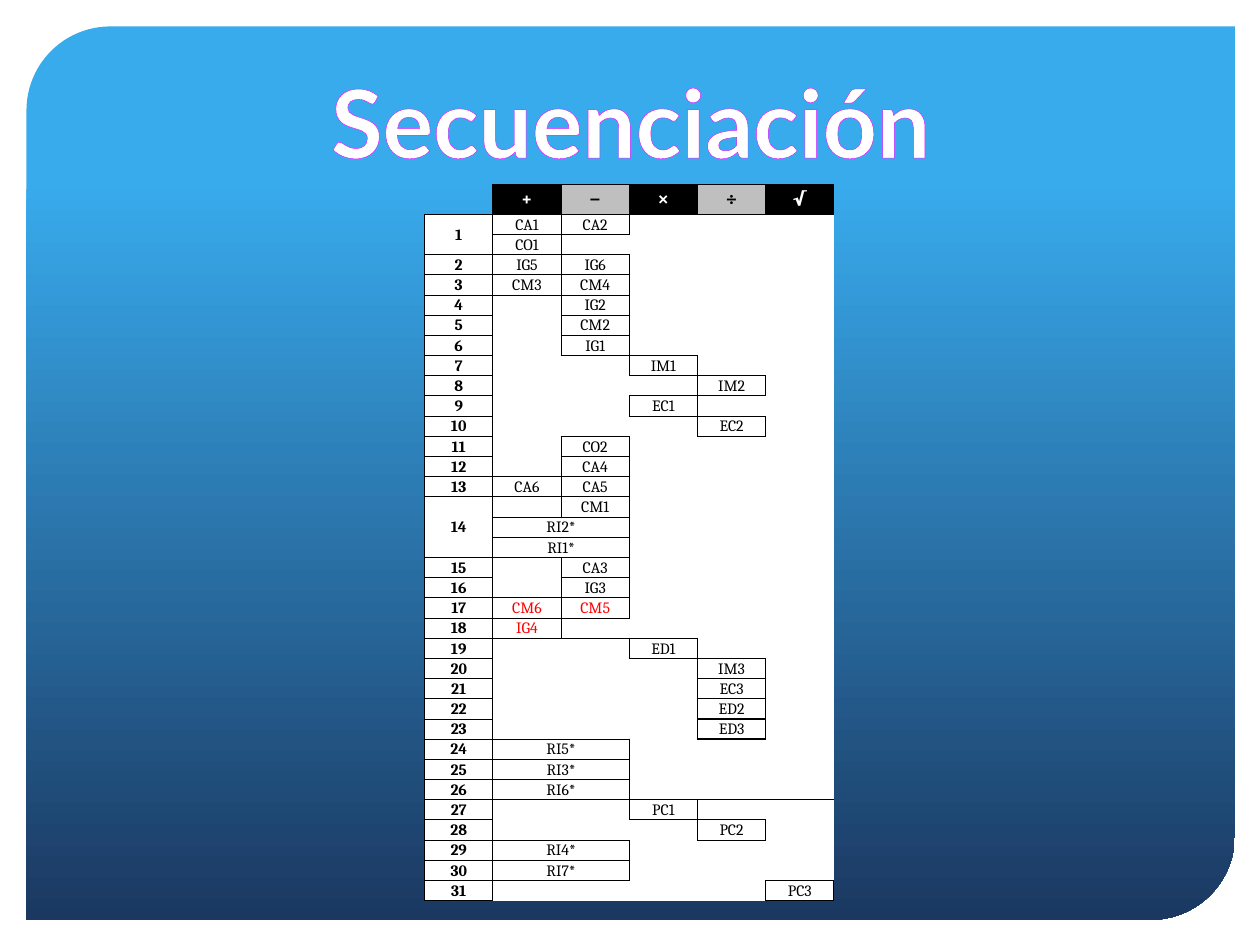
from lxml.etree import SubElement
from pptx import Presentation
from pptx.dml.color import RGBColor
from pptx.enum.shapes import MSO_SHAPE
from pptx.enum.text import MSO_ANCHOR, MSO_AUTO_SIZE, PP_ALIGN
from pptx.oxml import parse_xml
from pptx.oxml.ns import nsdecls, qn
from pptx.util import Inches, Pt

BLACK, WHITE, GRAY, RED = "000000", "FFFFFF", "BFBFBF", "FF0000"
PLUS, MINUS, TIMES, DIVIDE, ROOT = range(1, 6)
OPERATIONS = ["+", "−", "×", "÷", "√"]
COLUMN_COUNT = 6
HEADER_HEIGHT, TABLE_HEIGHT = 0.24, 5.7

# One entry per row: step label (empty when the step continues) and its codes
SCHEDULE = [
    ("1", {PLUS: "CA1", MINUS: "CA2"}),
    ("", {PLUS: "CO1"}),
    ("2", {PLUS: "IG5", MINUS: "IG6"}),
    ("3", {PLUS: "CM3", MINUS: "CM4"}),
    ("4", {MINUS: "IG2"}),
    ("5", {MINUS: "CM2"}),
    ("6", {MINUS: "IG1"}),
    ("7", {TIMES: "IM1"}),
    ("8", {DIVIDE: "IM2"}),
    ("9", {TIMES: "EC1"}),
    ("10", {DIVIDE: "EC2"}),
    ("11", {MINUS: "CO2"}),
    ("12", {MINUS: "CA4"}),
    ("13", {PLUS: "CA6", MINUS: "CA5"}),
    ("14", {MINUS: "CM1"}),
    ("", {PLUS: "RI2*"}),
    ("", {PLUS: "RI1*"}),
    ("15", {MINUS: "CA3"}),
    ("16", {MINUS: "IG3"}),
    ("17", {PLUS: "CM6", MINUS: "CM5"}),
    ("18", {PLUS: "IG4"}),
    ("19", {TIMES: "ED1"}),
    ("20", {DIVIDE: "IM3"}),
    ("21", {DIVIDE: "EC3"}),
    ("22", {DIVIDE: "ED2"}),
    ("23", {DIVIDE: "ED3"}),
    ("24", {PLUS: "RI5*"}),
    ("25", {PLUS: "RI3*"}),
    ("26", {PLUS: "RI6*"}),
    ("27", {TIMES: "PC1"}),
    ("28", {DIVIDE: "PC2"}),
    ("29", {PLUS: "RI4*"}),
    ("30", {PLUS: "RI7*"}),
    ("31", {ROOT: "PC3"}),
]
RED_CODES = {"CM6", "CM5", "IG4"}
THICK_CODE = "ED3"
LABELS = [label for label, codes in SCHEDULE]


def row_of(label):
    return LABELS.index(label) + 1


def color(value):
    return RGBColor.from_string(value)


def write(frame, text, *, size, font, fill=BLACK, bold=False):
    """Write one centred paragraph and return its run."""
    paragraph = frame.paragraphs[0]
    paragraph.alignment = PP_ALIGN.CENTER
    run = paragraph.add_run()
    run.text = text
    run.font.size, run.font.name, run.font.bold = Pt(size), font, bold
    run.font.color.rgb = color(fill)
    return run


def line_xml(tag, width, value):
    paint = f'<a:solidFill><a:srgbClr val="{value}"/></a:solidFill>' if width else "<a:noFill/>"
    return parse_xml(f'<a:{tag} {nsdecls("a")} w="{int(Pt(width))}">{paint}</a:{tag}>')


def add_panel(slide):
    panel = slide.shapes.add_shape(MSO_SHAPE.ROUND_2_DIAG_RECTANGLE, Inches(0.21),
                                   Inches(0.21), Inches(9.59), Inches(7.09))
    panel.adjustments[0], panel.adjustments[1] = 0.094, 0
    panel.shadow.inherit = False
    panel.line.fill.background()
    panel.fill.gradient()
    panel.fill.gradient_angle = 270
    stops = zip(panel.fill.gradient_stops, [(0.17, "38ABED"), (1, "1B3861")])
    for stop, (position, value) in stops:
        stop.position = position
        stop.color.rgb = color(value)


def format_title(slide):
    title = slide.shapes.title
    title.left, title.top = Inches(2.38), Inches(0.45)
    title.width, title.height = Inches(5.25), Inches(1.01)
    frame = title.text_frame
    frame.word_wrap = False
    frame.auto_size = MSO_AUTO_SIZE.SHAPE_TO_FIT_TEXT
    run = write(frame, "Secuenciación", size=54, font="Lato", fill=WHITE, bold=True)
    run.font._element.insert(0, line_xml("ln", 1, "E113FF"))
    # Bring the title in front of the panel and the table
    slide.shapes._spTree.append(title._element)


def find_merges():
    """Return (top, left, bottom, right) of every merged block."""
    merges = [(row_of("1"), 0, row_of("2") - 1, 0),
              (row_of("14"), 0, row_of("15") - 1, 0),
              (row_of("24"), TIMES, row_of("26"), ROOT)]
    for row, (label, codes) in enumerate(SCHEDULE, 1):
        shared = codes.get(PLUS, "").startswith("RI")
        if shared or row_of("19") <= row <= row_of("23"):
            merges.append((row, PLUS, row, MINUS))
    return merges


def set_borders(cell, row, column, texts, owners):
    """Rule a side when the cell on either side of it is boxed."""
    own = owners[row, column]
    boxed = set(texts) | {(row_of("14"), PLUS)}
    block = (row_of("24"), TIMES)
    sides = {"lnL": (row, column - 1), "lnR": (row, column + 1),
             "lnT": (row - 1, column), "lnB": (row + 1, column)}
    properties = cell._tc.get_or_add_tcPr()
    for tag, position in sides.items():
        pair = {own, owners.get(position)}
        open_top = tag == "lnT" and own == block
        width = 0.5 if len(pair) == 2 and pair & boxed and not open_top else 0
        if width and THICK_CODE in {texts.get(place) for place in pair}:
            width = 1
        properties.append(line_xml(tag, width, BLACK))


def format_cell(cell, text, row, column):
    cell.margin_left = cell.margin_right = cell.margin_top = Inches(0.01)
    cell.margin_bottom = 0
    cell.vertical_anchor = MSO_ANCHOR.MIDDLE
    background, ink = WHITE, RED if text in RED_CODES else BLACK
    if row == 0:
        background, ink = (BLACK, WHITE) if column % 2 else (GRAY, BLACK)
    if (row, column) == (0, 0):
        cell.fill.background()
    else:
        cell.fill.solid()
        cell.fill.fore_color.rgb = color(background)
    if text:
        write(cell.text_frame, text, size=9 if row else 11, font="Cambria",
              fill=ink, bold=row == 0 or column == 0)
    else:
        # A small end mark keeps empty cells from stretching the row
        paragraph = cell.text_frame.paragraphs[0]
        SubElement(paragraph._p, qn("a:endParaRPr"), sz="600")


def add_schedule(slide):
    row_count = len(SCHEDULE) + 1
    table = slide.shapes.add_table(row_count, COLUMN_COUNT, Inches(3.37), Inches(1.46),
                                   Inches(3.25), Inches(TABLE_HEIGHT)).table
    table.first_row = table.horz_banding = False
    for row in table.rows:
        row.height = Inches((TABLE_HEIGHT - HEADER_HEIGHT) / len(SCHEDULE))
    table.rows[0].height = Inches(HEADER_HEIGHT)

    # Texts by position
    texts = {(0, column): sign for column, sign in enumerate(OPERATIONS, 1)}
    for row, (label, codes) in enumerate(SCHEDULE, 1):
        if label:
            texts[row, 0] = label
        texts.update({(row, column): code for column, code in codes.items()})

    # Merged blocks, and the cell that owns each position
    owners = {(row, column): (row, column)
              for row in range(row_count) for column in range(COLUMN_COUNT)}
    for top, left, bottom, right in find_merges():
        table.cell(top, left).merge(table.cell(bottom, right))
        for row in range(top, bottom + 1):
            for column in range(left, right + 1):
                owners[row, column] = (top, left)

    for row, column in owners:
        cell = table.cell(row, column)
        set_borders(cell, row, column, texts, owners)
        format_cell(cell, texts.get((row, column), ""), row, column)


def main():
    presentation = Presentation()
    presentation.slide_width, presentation.slide_height = Inches(10), Inches(7.5)
    slide = presentation.slides.add_slide(presentation.slide_layouts[5])
    add_panel(slide)
    add_schedule(slide)
    format_title(slide)
    presentation.save("out.pptx")


if __name__ == "__main__":
    main()
